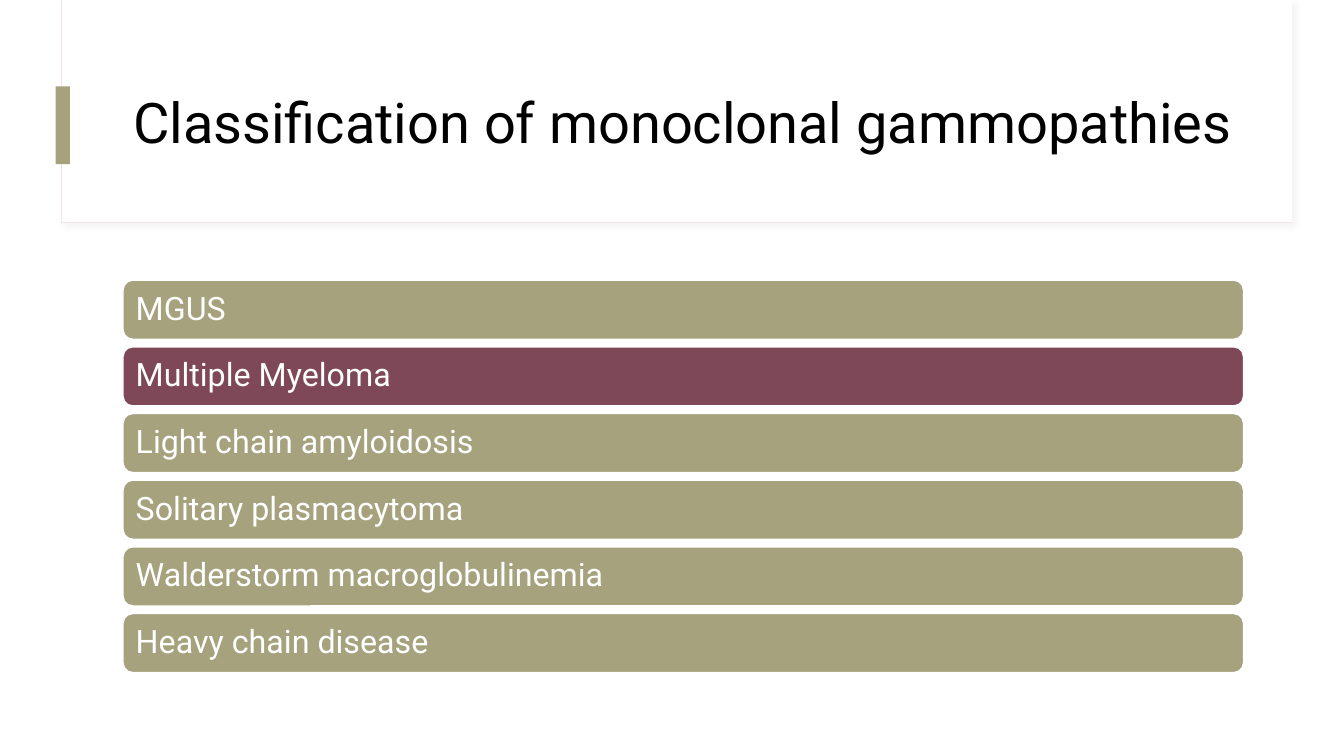
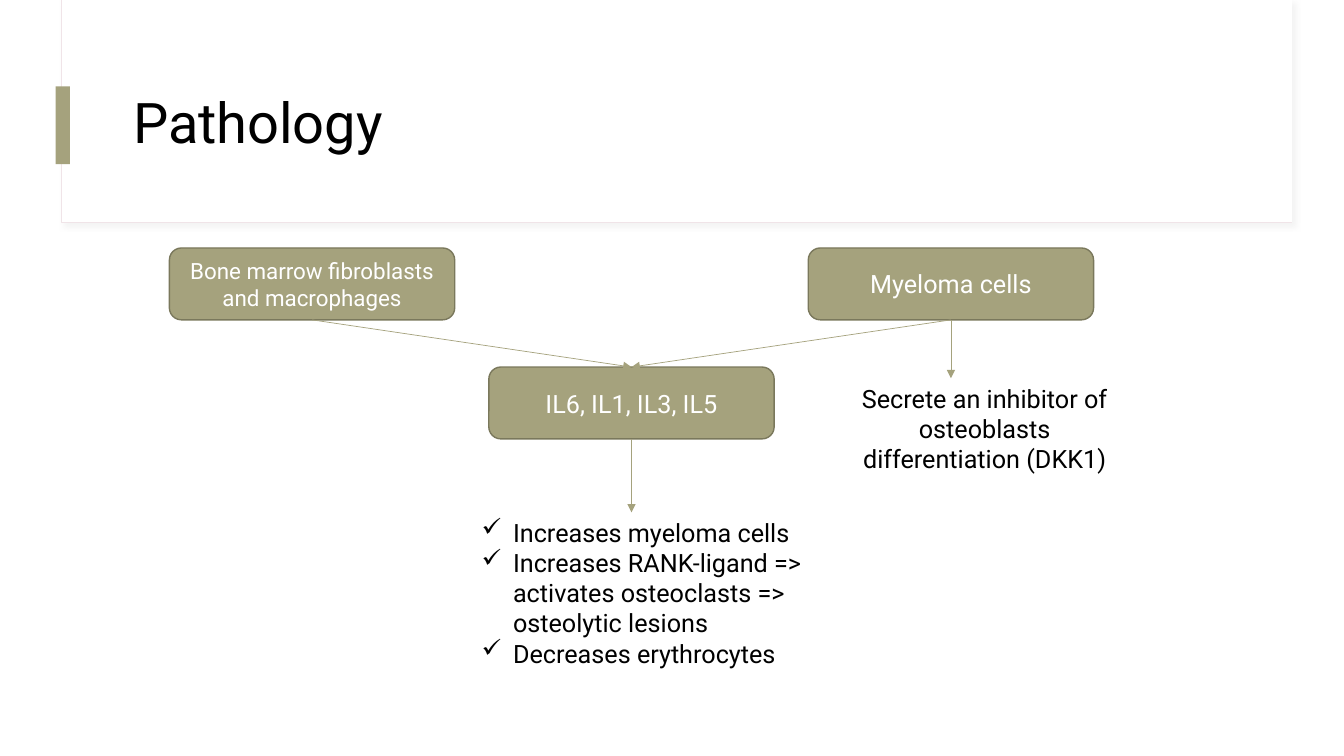
from lxml import etree
from pptx import Presentation
from pptx.dml.color import RGBColor
from pptx.enum import shapes, text
from pptx.oxml import parse_xml
from pptx.oxml.ns import qn
from pptx.util import Cm, Pt

# Content
GAMMOPATHIES_TITLE = "Classification of monoclonal gammopathies"
GAMMOPATHIES = ["MGUS", "Multiple Myeloma", "Light chain amyloidosis",
                "Solitary plasmacytoma", "Walderstorm macroglobulinemia",
                "Heavy chain disease"]
HIGHLIGHTED = "Multiple Myeloma"

PATHOLOGY_TITLE = "Pathology"
# name: (wording, left, top, text size)
CELL_BOXES = {
    "marrow": ("Bone marrow fibroblasts and macrophages", 4.27, 6.25, 16),
    "myeloma": ("Myeloma cells", 20.37, 6.25, 18),
    "cytokines": ("IL6, IL1, IL3, IL5", 12.32, 9.25, 18),
}
CYTOKINE_EFFECTS = ["Increases myeloma cells",
                    "Increases RANK-ligand => activates osteoclasts => osteolytic lesions",
                    "Decreases erythrocytes"]
MYELOMA_EFFECT = ["Secrete an inhibitor of osteoblasts differentiation (DKK1)"]

# Shared style
FONT = "Roboto"
OLIVE = RGBColor(0xA5, 0xA2, 0x7D)
DARK_OLIVE = RGBColor(0x7A, 0x78, 0x5C)
PLUM = RGBColor(0x7E, 0x48, 0x58)
PALE_PINK = RGBColor(0xF0, 0xE4, 0xE8)
WHITE = RGBColor(0xFF, 0xFF, 0xFF)
BLACK = RGBColor(0, 0, 0)
SHADOW = """<a:effectLst xmlns:a="http://schemas.openxmlformats.org/drawingml/2006/main">
<a:outerShdw blurRad="50800" dist="38100" dir="2700000" algn="tl" rotWithShape="0">
<a:srgbClr val="D9D9D9"><a:alpha val="30000"/></a:srgbClr></a:outerShdw></a:effectLst>"""
MARGIN, CONTENT_WIDTH = 3.1, 28.24
BOX_WIDTH, BOX_HEIGHT = 7.19, 1.81
BAR_TOP, BAR_HEIGHT, BAR_PITCH = 7.06, 1.49, 1.68


def add_box(slide, kind, area, fill, line=None, line_width=1):
    box = slide.shapes.add_shape(kind, *map(Cm, area))
    box.shadow.inherit = False
    box.fill.solid()
    box.fill.fore_color.rgb = fill
    if line is None:
        box.line.fill.background()
    else:
        box.line.color.rgb = line
        box.line.width = Pt(line_width)
    return box


def write(shape, lines, size, color, align, spacing=None):
    frame = shape.text_frame
    frame.word_wrap = True
    for number, line in enumerate(lines):
        paragraph = frame.add_paragraph() if number else frame.paragraphs[0]
        paragraph.alignment = align
        paragraph.line_spacing = spacing
        run = paragraph.add_run()
        run.text = line
        run.font.name, run.font.size = FONT, Pt(size)
        run.font.color.rgb = color
    return frame


def add_note(slide, lines, area, align):
    note = slide.shapes.add_textbox(*map(Cm, area))
    return write(note, lines, 18, BLACK, align)


def add_check(paragraph):
    properties = paragraph._p.get_or_add_pPr()
    properties.set("marL", str(Cm(0.79)))
    properties.set("indent", str(-Cm(0.79)))
    etree.SubElement(properties, qn("a:buChar")).set("char", "✓")


def add_arrow(slide, source, target=None, drop=0):
    """Arrow from the bottom of source to the top of target, or straight down."""
    x, y = source.left + source.width // 2, source.top + source.height
    arrow = slide.shapes.add_connector(
        shapes.MSO_CONNECTOR.STRAIGHT, x, y, x, y + Cm(drop))
    arrow.begin_connect(source, 2)
    if target is not None:
        arrow.end_connect(target, 0)
    arrow.line.color.rgb = OLIVE
    arrow.line.width = Pt(0.5)
    etree.SubElement(arrow.line._get_or_add_ln(), qn("a:tailEnd")).set("type", "triangle")
    etree.SubElement(arrow._element.spPr, qn("a:effectLst"))


def decorate(layout, slide):
    """Place the title band on the layout, behind its placeholders."""
    rectangle = shapes.MSO_SHAPE.RECTANGLE
    frame = add_box(slide, rectangle, (1.55, 0, 31.01, 5.61), WHITE, PALE_PINK, 0.75)
    properties = frame._element.spPr
    properties.replace(properties.find(qn("a:effectLst")), parse_xml(SHADOW))
    panel = add_box(slide, rectangle, (1.57, 0, 30.99, 5.59), WHITE)
    accent = add_box(slide, rectangle, (1.4, 2.18, 0.36, 1.96), OLIVE)
    for position, part in enumerate((frame, panel, accent), start=2):
        layout.shapes.element.insert(position, part._element)


def add_slide(deck, layout, title):
    slide = deck.slides.add_slide(layout)
    heading = slide.shapes.title
    heading.left, heading.top = Cm(MARGIN), Cm(1.52)
    heading.width, heading.height = Cm(CONTENT_WIDTH), Cm(3.28)
    frame = write(heading, [title], 40, BLACK, text.PP_ALIGN.LEFT, 0.9)
    frame.vertical_anchor = text.MSO_ANCHOR.MIDDLE
    frame.auto_size = text.MSO_AUTO_SIZE.NONE
    return slide


def fill_classification(slide):
    for row, name in enumerate(GAMMOPATHIES):
        area = (MARGIN, BAR_TOP + row * BAR_PITCH, CONTENT_WIDTH, BAR_HEIGHT)
        bar = add_box(slide, shapes.MSO_SHAPE.ROUNDED_RECTANGLE, area,
                      PLUM if name == HIGHLIGHTED else OLIVE, WHITE)
        frame = write(bar, [name], 23, WHITE, text.PP_ALIGN.LEFT, 0.9)
        frame.vertical_anchor = text.MSO_ANCHOR.MIDDLE


def fill_pathology(slide):
    # Cells and cytokines
    boxes = {}
    for key, (wording, left, top, size) in CELL_BOXES.items():
        boxes[key] = add_box(slide, shapes.MSO_SHAPE.ROUNDED_RECTANGLE,
                             (left, top, BOX_WIDTH, BOX_HEIGHT), OLIVE, DARK_OLIVE)
        frame = write(boxes[key], [wording], size, WHITE, text.PP_ALIGN.CENTER)
        frame.vertical_anchor = text.MSO_ANCHOR.MIDDLE

    # Arrows
    for source in ("marrow", "myeloma"):
        add_arrow(slide, boxes[source], boxes["cytokines"])
    add_arrow(slide, boxes["cytokines"], drop=1.85)
    add_arrow(slide, boxes["myeloma"], drop=1.47)

    # Effects
    effects = add_note(slide, CYTOKINE_EFFECTS, (11.89, 12.9, 10.69, 4.11),
                       text.PP_ALIGN.LEFT)
    for paragraph in effects.paragraphs:
        add_check(paragraph)
    add_note(slide, MYELOMA_EFFECT, (21.31, 9.53, 7.01, 2.57), text.PP_ALIGN.CENTER)


def main():
    deck = Presentation()
    deck.slide_width, deck.slide_height = Cm(33.87), Cm(19.05)
    layout = deck.slide_layouts.get_by_name("Title Only")
    classification = add_slide(deck, layout, GAMMOPATHIES_TITLE)
    decorate(layout, classification)
    fill_classification(classification)
    fill_pathology(add_slide(deck, layout, PATHOLOGY_TITLE))
    deck.save("out.pptx")


if __name__ == "__main__":
    main()
